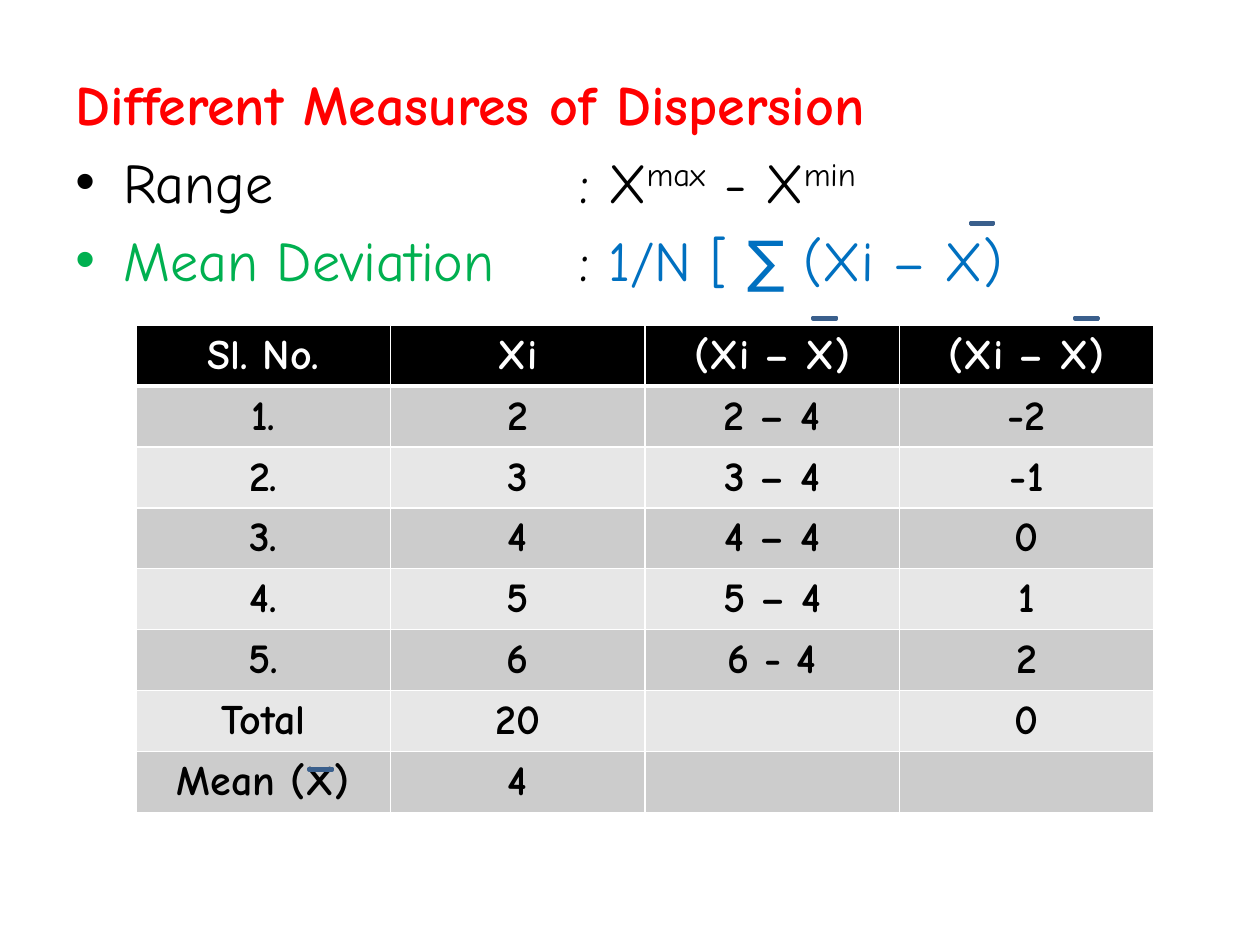
from lxml.etree import SubElement
from pptx import Presentation
from pptx.dml.color import RGBColor
from pptx.enum.shapes import MSO_SHAPE
from pptx.enum.text import MSO_ANCHOR, PP_ALIGN
from pptx.oxml.ns import qn
from pptx.util import Inches, Pt

FONT = "Comic Neue"
BLACK, WHITE = "000000", "FFFFFF"
GREEN, BLUE = "00B050", "0070C0"
BANDS = ["E7E7E7", "CCCCCC"]

BULLETS = [
    [("Range\t\t\t: X", BLACK, False), ("max", BLACK, True),
     (" - X", BLACK, False), ("min", BLACK, True)],
    [("Mean Deviation ", GREEN, False), ("\t: ", BLACK, False),
     ("1/N [ ∑ (Xi – X)", BLUE, False)],
]
ROWS = [
    ["Sl. No.", "Xi", "(Xi – X)", "(Xi – X)"],
    ["1.", "2", "2 – 4", "-2"],
    ["2.", "3", "3 – 4", "-1"],
    ["3.", "4", "4 – 4", "0"],
    ["4.", "5", "5 – 4", "1"],
    ["5.", "6", "6 - 4", "2"],
    ["Total", "20", "", "0"],
    ["Mean (X)", "4", "", ""],
]
MEAN_BARS = [(7.67, 1.75), (6.42, 2.5), (8.5, 2.5), (2.42, 6.08)]


def rgb(color):
    return RGBColor.from_string(color)


def add_text(p, text, size=32, color=BLACK, bold=False, raised=False):
    r = p.add_run()
    r.text = text
    r.font.name = FONT
    r.font.size = Pt(size)
    r.font.bold = bold
    r.font.color.rgb = rgb(color)
    if raised:
        r.font._element.set("baseline", "30000")


def add_bullet(p):
    """Give the paragraph a hanging bullet and tab stops one inch apart."""
    pPr = p._p.get_or_add_pPr()
    pPr.set("marL", str(Inches(0.38)))
    pPr.set("indent", str(Inches(-0.38)))
    pPr.set("defTabSz", str(Inches(1)))
    SubElement(pPr, qn("a:buFont"), typeface="Arial")
    SubElement(pPr, qn("a:buChar"), char="•")


def add_title(slide, text):
    title = slide.shapes.title
    title.left, title.top = Inches(0.5), Inches(0.5)
    title.width, title.height = Inches(9), Inches(0.62)
    tf = title.text_frame
    tf.vertical_anchor = MSO_ANCHOR.TOP
    p = tf.paragraphs[0]
    p.alignment = PP_ALIGN.LEFT
    add_text(p, text, color="FF0000", bold=True)


def add_measures(slide):
    box = slide.shapes.add_textbox(Inches(0.5), Inches(1.12), Inches(9), Inches(1.3))
    tf = box.text_frame
    tf.word_wrap = True
    for i, runs in enumerate(BULLETS):
        p = tf.add_paragraph() if i else tf.paragraphs[0]
        if i:
            p.space_before = Pt(6.4)
        add_bullet(p)
        for text, color, raised in runs:
            add_text(p, text, color=color, raised=raised)


def set_borders(cell, bottom):
    tcPr = cell._tc.get_or_add_tcPr()
    for i, (side, width) in enumerate([("L", 1), ("R", 1), ("T", 1), ("B", bottom)]):
        ln = SubElement(tcPr, qn(f"a:ln{side}"), w=str(Pt(width)))
        fill = SubElement(ln, qn("a:solidFill"))
        SubElement(fill, qn("a:srgbClr"), val=WHITE)
        tcPr.insert(i, ln)


def add_deviation_table(slide):
    frame = slide.shapes.add_table(len(ROWS), len(ROWS[0]), Inches(1.08), Inches(2.58),
                                   Inches(8.08), Inches(3.87))
    for i, row in enumerate(ROWS):
        header = i == 0
        for j, text in enumerate(row):
            cell = frame.table.cell(i, j)
            cell.margin_bottom = Inches(0.03)
            cell.fill.solid()
            cell.fill.fore_color.rgb = rgb(BLACK if header else BANDS[i % 2])
            set_borders(cell, bottom=3 if header else 1)
            p = cell.text_frame.paragraphs[0]
            p.alignment = PP_ALIGN.CENTER
            if text:
                add_text(p, text, size=24, color=WHITE if header else BLACK, bold=True)


def add_mean_bar(slide, left, top):
    """Draw the bar that stands over an X to mark the mean."""
    sp = slide.shapes.add_shape(MSO_SHAPE.MATH_MINUS, Inches(left), Inches(top),
                                Inches(0.25), Inches(0.05))
    sp.shadow.inherit = False
    sp.fill.solid()
    sp.fill.fore_color.rgb = rgb("4F81BD")
    sp.line.color.rgb = rgb("3A5F8C")
    sp.line.width = Pt(2)


def main():
    prs = Presentation()
    prs.slide_width, prs.slide_height = Inches(10), Inches(7.5)
    slide = prs.slides.add_slide(prs.slide_layouts[5])
    add_title(slide, "Different Measures of Dispersion")
    add_measures(slide)
    add_deviation_table(slide)
    for left, top in MEAN_BARS:
        add_mean_bar(slide, left, top)
    prs.save("out.pptx")


if __name__ == "__main__":
    main()
